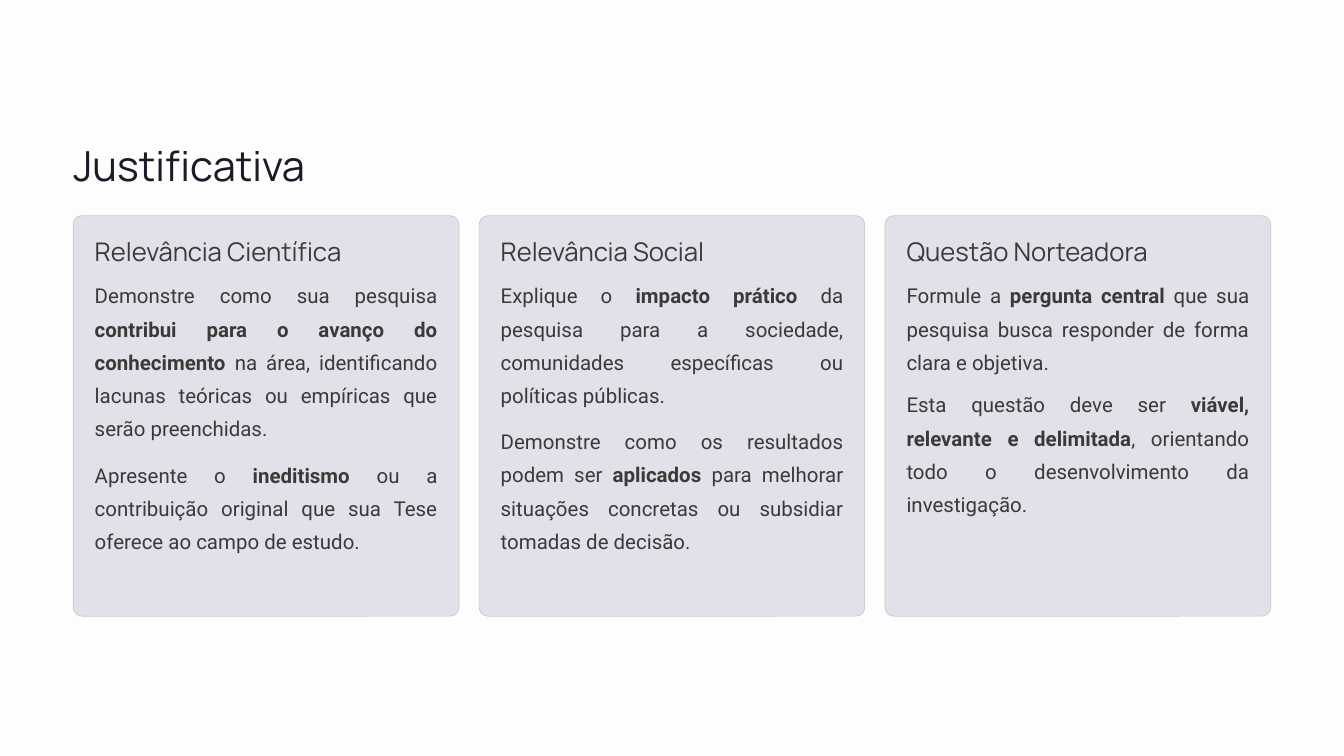
import pptx
import pptx.dml.color
import pptx.enum.shapes
import pptx.enum.text
import pptx.util

Inches = pptx.util.Inches
Pt = pptx.util.Pt
ALIGN = pptx.enum.text.PP_ALIGN

COLORS = {
    "page": "FDFDFE",
    "title": "1B1B27",
    "text": "3C3939",
    "card": "E1E1EA",
    "border": "C7C7D0",
}
MARGIN, CARD_TOP = 1.09, 3.21
CARD_WIDTH, CARD_HEIGHT, CARD_GAP = 5.74, 5.96, 0.3
PADDING = 0.32

# Each card: heading, then paragraphs as (top, text); ** marks bold spans.
CARDS = [
    ("Relevância Científica", [
        (4.09, "Demonstre como sua pesquisa **contribui para o avanço do conhecimento **"
               "na área, identificando lacunas teóricas ou empíricas que serão preenchidas."),
        (6.76, "Apresente o **ineditismo **ou a contribuição original que sua Tese "
               "oferece ao campo de estudo."),
    ]),
    ("Relevância Social", [
        (4.09, "Explique o **impacto prático** da pesquisa para a sociedade, "
               "comunidades específicas ou políticas públicas."),
        (6.26, "Demonstre como os resultados podem ser **aplicados** para melhorar "
               "situações concretas ou subsidiar tomadas de decisão."),
    ]),
    ("Questão Norteadora", [
        (4.09, "Formule a **pergunta central **que sua pesquisa busca responder "
               "de forma clara e objetiva."),
        (5.71, "Esta questão deve ser **viável, relevante e delimitada**, orientando "
               "todo o desenvolvimento da investigação."),
    ]),
]


def color(name):
    return pptx.dml.color.RGBColor.from_string(COLORS[name])


class Page:
    """Holds the current slide and the style of its elements."""

    heading_font, body_font = "Manrope", "Roboto"

    def __init__(self, deck):
        self.slide = deck.slides.add_slide(deck.slide_layouts[5])
        fill = self.slide.background.fill
        fill.solid()
        fill.fore_color.rgb = color("page")

    def fill_text(self, box, text, font, size, spacing, ink="text", align=ALIGN.LEFT):
        """Fill a box with one paragraph, with ** around bold spans."""
        frame = box.text_frame
        frame.word_wrap = True
        frame.auto_size = pptx.enum.text.MSO_AUTO_SIZE.NONE
        frame.vertical_anchor = pptx.enum.text.MSO_ANCHOR.TOP
        frame.margin_left = frame.margin_right = 0
        frame.margin_top = frame.margin_bottom = 0
        para = frame.paragraphs[0]
        para.alignment = align
        para.line_spacing = Pt(spacing)
        for index, part in enumerate(text.split("**")):
            span = para.add_run()
            span.text = part
            span.font.name = font
            span.font.size = Pt(size)
            span.font.bold = index % 2 == 1
            span.font.color.rgb = color(ink)

    def title(self, text, left, top, width, height):
        box = self.slide.shapes.title
        box.left, box.top = Inches(left), Inches(top)
        box.width, box.height = Inches(width), Inches(height)
        self.fill_text(box, text, self.heading_font, 44.4, 55.6, ink="title")

    def text_box(self, left, top, width, height):
        return self.slide.shapes.add_textbox(
            Inches(left), Inches(top), Inches(width), Inches(height))

    def heading(self, text, left, top):
        box = self.text_box(left, top, 3.88, 0.52)
        self.fill_text(box, text, self.heading_font, 27.5, 34.4)

    def body(self, text, left, top):
        box = self.text_box(left, top, CARD_WIDTH - 2 * PADDING, 1.93)
        self.fill_text(box, text, self.body_font, 21.9, 35.6, align=ALIGN.JUSTIFY)

    def panel(self, left, top, width, height):
        shape = self.slide.shapes.add_shape(
            pptx.enum.shapes.MSO_SHAPE.ROUNDED_RECTANGLE,
            Inches(left), Inches(top), Inches(width), Inches(height))
        shape.adjustments[0] = 0.13 / min(width, height)
        shape.shadow.inherit = False
        shape.fill.solid()
        shape.fill.fore_color.rgb = color("card")
        shape.line.color.rgb = color("border")
        shape.line.width = Pt(0.75)


def main():
    deck = pptx.Presentation()
    deck.slide_width, deck.slide_height = Inches(20), Inches(11.25)
    page = Page(deck)
    page.title("Justificativa", MARGIN, 2.05, 6.2, 0.81)
    for column, (heading, paragraphs) in enumerate(CARDS):
        left = MARGIN + column * (CARD_WIDTH + CARD_GAP)
        page.panel(left, CARD_TOP, CARD_WIDTH, CARD_HEIGHT)
        page.heading(heading, left + PADDING, 3.49)
        for top, text in paragraphs:
            page.body(text, left + PADDING, top)
    deck.save("out.pptx")


if __name__ == "__main__":
    main()
